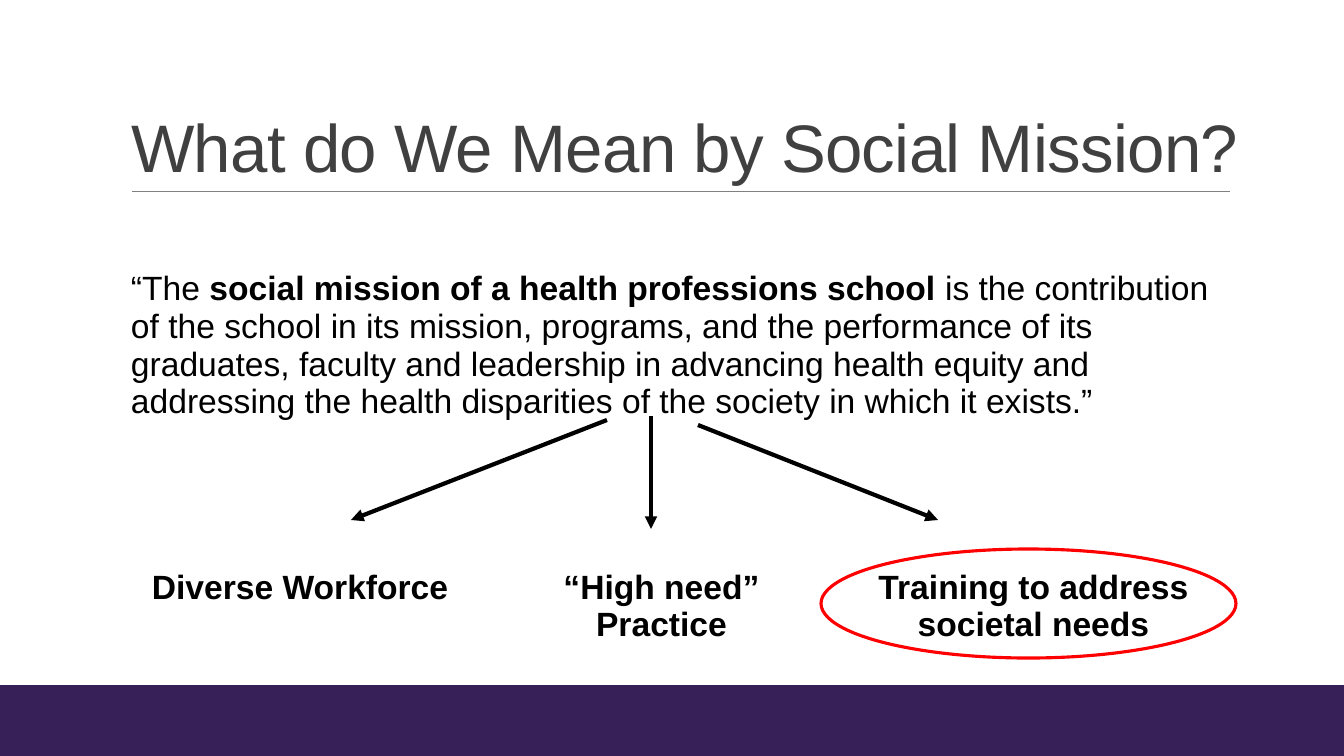
from lxml import etree
from pptx import Presentation, util as u
from pptx.dml.color import RGBColor
from pptx.enum import shapes, text
from pptx.oxml.ns import qn

SCALE = 914400 / 100.8
WIDE, HIGH = 1344, 756
COLORS = {"ink": "000000", "title": "404040", "rule": "808080",
          "band": "372058", "ring": "FF0000", "paper": "FFFFFF"}


def px(*vals):
    """Turn whole pixels into EMU lengths."""
    return [u.Emu(round(v * SCALE)) for v in vals]


def rgb(name):
    return RGBColor.from_string(COLORS[name])


class Deck:
    font = "Arial"

    def __init__(self):
        self.prs = Presentation()
        self.prs.slide_width, self.prs.slide_height = px(WIDE, HIGH)
        self.slide = self.prs.slides.add_slide(self.prs.slide_layouts[5])

    def style(self, run, size, color="ink", bold=False):
        run.font.name = self.font
        run.font.size = u.Pt(size)
        run.font.bold = bold
        run.font.color.rgb = rgb(color)

    def title(self, words, *box):
        shape = self.slide.shapes.title
        shape.left, shape.top, shape.width, shape.height = px(*box)
        frame = shape.text_frame
        frame.text = words
        frame.auto_size = text.MSO_AUTO_SIZE.NONE
        frame.vertical_anchor = text.MSO_ANCHOR.BOTTOM
        para = frame.paragraphs[0]
        para.alignment = text.PP_ALIGN.LEFT
        para.line_spacing = 0.85
        run = para.runs[0]
        self.style(run, 48, "title")
        run._r.get_or_add_rPr().set("spc", "-50")

    def quote(self, parts, *box):
        """Add one paragraph made of (words, bold) parts."""
        frame = self.slide.shapes.add_textbox(*px(*box)).text_frame
        frame.word_wrap = True
        frame.margin_left = frame.margin_right = 0
        frame.margin_top = frame.margin_bottom = 0
        para = frame.paragraphs[0]
        para.line_spacing = 0.94
        for words, bold in parts:
            run = para.add_run()
            run.text = words
            self.style(run, 24, bold=bold)

    def table(self, labels, cols, left, top, height):
        frame = self.slide.shapes.add_table(
            1, len(cols), *px(left, top, sum(cols), height))
        grid = frame.table
        grid.first_row = grid.horz_banding = False
        for i, (label, wide) in enumerate(zip(labels, cols)):
            grid.columns[i].width = px(wide)[0]
            cell = grid.cell(0, i)
            cell.fill.solid()
            cell.fill.fore_color.rgb = rgb("paper")
            cell.text_frame.text = label
            para = cell.text_frame.paragraphs[0]
            para.alignment = text.PP_ALIGN.CENTER
            self.style(para.runs[0], 24, bold=True)

    def shape(self, kind, *box, fill=None, line=None, width=1):
        shape = self.slide.shapes.add_shape(kind, *px(*box))
        shape.shadow.inherit = False
        if fill:
            shape.fill.solid()
            shape.fill.fore_color.rgb = rgb(fill)
        else:
            shape.fill.background()
        if line:
            shape.line.color.rgb = rgb(line)
            shape.line.width = u.Pt(width)
        else:
            shape.line.fill.background()

    def line(self, *ends, color="ink", width=3, arrow=False):
        link = self.slide.shapes.add_connector(
            shapes.MSO_CONNECTOR.STRAIGHT, *px(*ends))
        link.line.color.rgb = rgb(color)
        link.line.width = u.Pt(width)
        if arrow:
            etree.SubElement(link.line._get_or_add_ln(), qn("a:tailEnd"),
                             type="triangle")
        etree.SubElement(link._element.spPr, qn("a:effectLst"))


def main():
    deck = Deck()
    kinds = shapes.MSO_SHAPE
    deck.shape(kinds.RECTANGLE, 0, 685, WIDE, HIGH - 685, fill="band")
    deck.line(132, 191, 1230, 191, color="rule", width=0.5)
    deck.title("What do We Mean by Social Mission?", 121, 31, 1146, 160)
    deck.quote([
        ("“The ", False),
        ("social mission of a health professions school ", True),
        ("is the contribution of the school in its mission, programs, and "
         "the performance of its graduates, faculty and leadership in "
         "advancing health equity and addressing the health disparities of "
         "the society in which it exists.”", False),
    ], 131, 270, 1099, 150)
    deck.table(["Diverse Workforce", "“High need” Practice",
                "Training to address societal needs"],
               [372, 351, 393], 114, 564, 91)
    deck.shape(kinds.OVAL, 821, 549, 415, 109, line="ring", width=2.25)
    for ends in [(607, 420, 351, 520), (651, 416, 651, 529),
                 (698, 425, 938, 520)]:
        deck.line(*ends, arrow=True)
    deck.prs.save("out.pptx")


if __name__ == "__main__":
    main()
